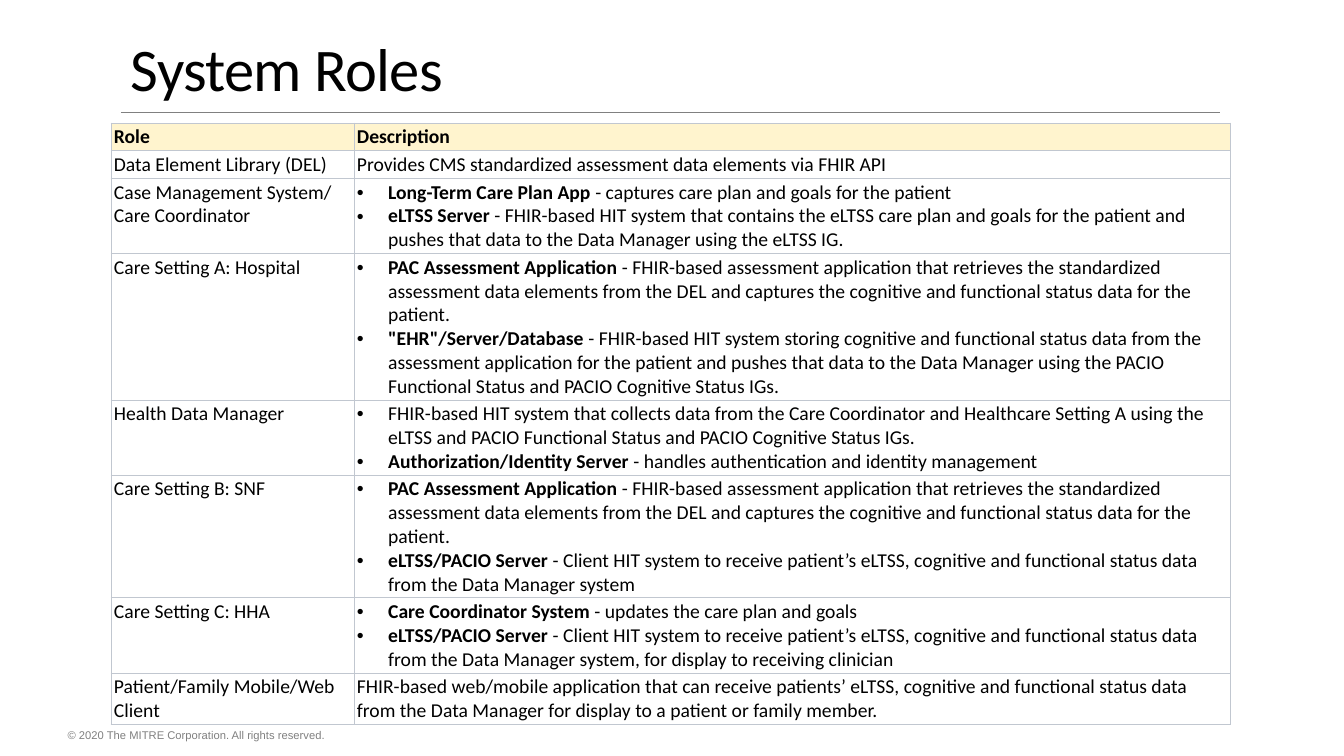
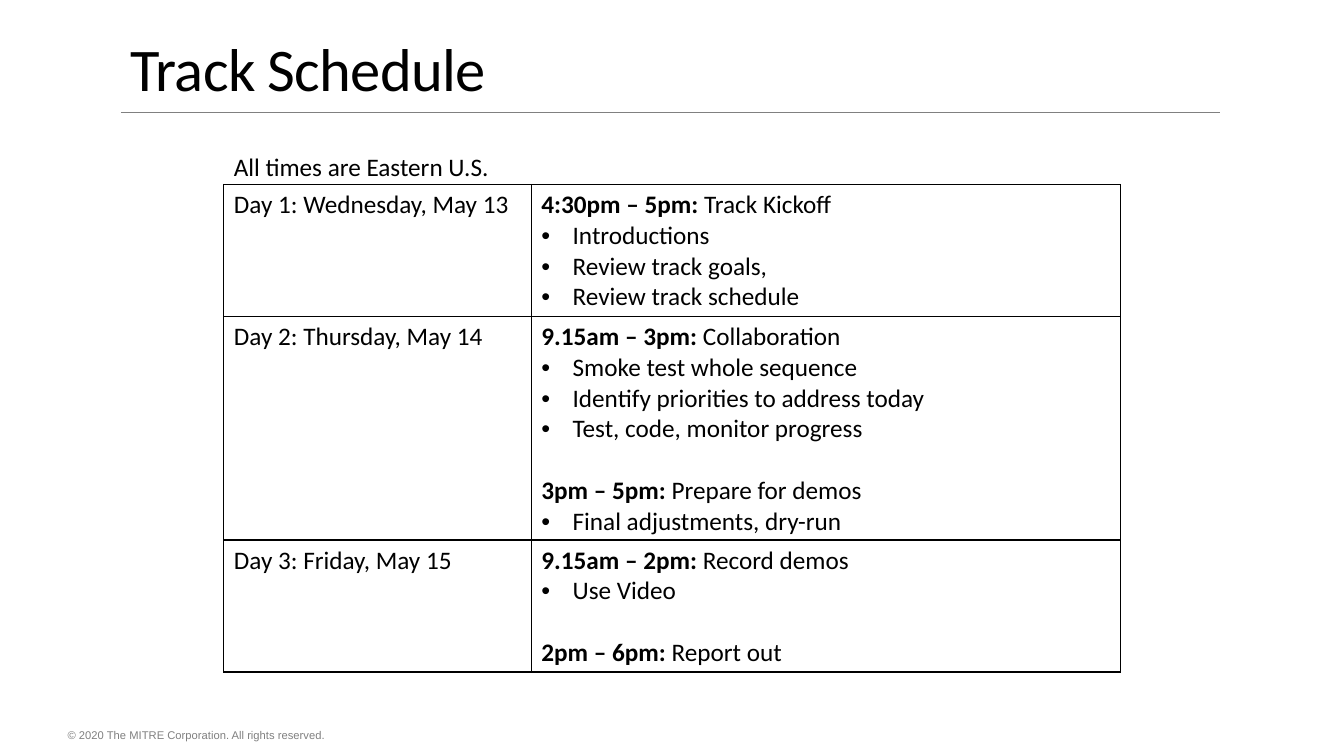
from dataclasses import dataclass

from lxml import etree
from pptx import Presentation
from pptx.dml.color import RGBColor
from pptx.enum.shapes import MSO_CONNECTOR
from pptx.enum.text import MSO_ANCHOR
from pptx.oxml.ns import qn
from pptx.util import Inches, Pt

STRAIGHT = MSO_CONNECTOR.STRAIGHT
MIDDLE, BOTTOM = MSO_ANCHOR.MIDDLE, MSO_ANCHOR.BOTTOM

BLACK = RGBColor(0x00, 0x00, 0x00)
WHITE = RGBColor(0xFF, 0xFF, 0xFF)
GRAY = RGBColor(0x80, 0x80, 0x80)
PALE_BLUE = RGBColor(0xC1, 0xC7, 0xD0)
CREAM = RGBColor(0xFF, 0xF4, 0xCE)

BODY_FONT, FOOTER_FONT = "Calibri", "Arial"
SLIDE_WIDTH, SLIDE_HEIGHT = 13.33, 7.5
BULLET_INDENT = 0.31
LINE_FACTOR = 1.21  # line height as a multiple of the text size
FOOTER = "© 2020 The MITRE Corporation. All rights reserved."


@dataclass
class Line:
    """One paragraph: a bold lead, then regular text."""
    lead: str = ""
    text: str = ""
    bullet: bool = False
    gap: bool = False  # one empty line's worth of space before


@dataclass
class TableStyle:
    size: int
    border: RGBColor
    border_width: float
    inset_x: float
    inset_y: float


ROLE_STYLE = TableStyle(14, PALE_BLUE, 0.5, 0.03, 0.02)
SCHEDULE_STYLE = TableStyle(18, BLACK, 1, 0.1, 0.05)


def item(lead="", text=""):
    return Line(lead, text, bullet=True)


ASSESSMENT_APP = item(
    "PAC Assessment Application ",
    "- FHIR-based assessment application that retrieves the standardized assessment data "
    "elements from the DEL and captures the cognitive and functional status data for the patient.")
CLIENT_SERVER = "eLTSS/PACIO Server "
CLIENT_TEXT = ("- Client HIT system to receive patient’s eLTSS, cognitive and functional "
               "status data from the Data Manager system")

# Each row: left cell, right cell, number of text lines
ROLES = [
    ([Line("Role")], [Line("Description")], 1),
    ([Line(text="Data Element Library (DEL)")],
     [Line(text="Provides CMS standardized assessment data elements via FHIR API")], 1),
    ([Line(text="Case Management System/ Care Coordinator")],
     [item("Long-Term Care Plan App ", "- captures care plan and goals for the patient"),
      item("eLTSS Server ",
           "- FHIR-based HIT system that contains the eLTSS care plan and goals for the "
           "patient and pushes that data to the Data Manager using the eLTSS IG.")], 3),
    ([Line(text="Care Setting A: Hospital")],
     [ASSESSMENT_APP,
      item('"EHR"/Server/Database ',
           "- FHIR-based HIT system storing cognitive and functional status data from the "
           "assessment application for the patient and pushes that data to the Data Manager "
           "using the PACIO Functional Status and PACIO Cognitive Status IGs.")], 6),
    ([Line(text="Health Data Manager")],
     [item(text="FHIR-based HIT system that collects data from the Care Coordinator and "
                "Healthcare Setting A using the eLTSS and PACIO Functional Status and "
                "PACIO Cognitive Status IGs."),
      item("Authorization/Identity Server ",
           "- handles authentication and identity management")], 3),
    ([Line(text="Care Setting B: SNF")],
     [ASSESSMENT_APP, item(CLIENT_SERVER, CLIENT_TEXT)], 5),
    ([Line(text="Care Setting C: HHA")],
     [item("Care Coordinator System ", "- updates the care plan and goals"),
      item(CLIENT_SERVER, CLIENT_TEXT + ", for display to receiving clinician")], 3),
    ([Line(text="Patient/Family Mobile/Web Client")],
     [Line(text="FHIR-based web/mobile application that can receive patients’ eLTSS, "
                "cognitive and functional status data from the Data Manager for display "
                "to a patient or family member.")], 2),
]

SCHEDULE = [
    ([Line(text="Day 1: Wednesday, May 13")],
     [Line("4:30pm – 5pm: ", "Track Kickoff"),
      item(text="Introductions"),
      item(text="Review track goals,"),
      item(text="Review track schedule")], 4),
    ([Line(text="Day 2: Thursday, May 14")],
     [Line("9.15am – 3pm: ", "Collaboration"),
      item(text="Smoke test whole sequence"),
      item(text="Identify priorities to address today"),
      item(text="Test, code, monitor progress"),
      Line("3pm – 5pm: ", "Prepare for demos", gap=True),
      item(text="Final adjustments, dry-run")], 7),
    ([Line(text="Day 3: Friday, May 15")],
     [Line("9.15am – 2pm: ", "Record demos"),
      item(text="Use Video"),
      Line("2pm – 6pm: ", "Report out", gap=True)], 4),
]


def style_font(font, size, color=BLACK, name=BODY_FONT, bold=False):
    font.size, font.name, font.bold = Pt(size), name, bold
    font.color.rgb = color


def add_text(slide, box, text, size, color=BLACK, name=BODY_FONT):
    shape = slide.shapes.add_textbox(*map(Inches, box))
    frame = shape.text_frame
    frame.word_wrap = True
    frame.text = text
    style_font(frame.paragraphs[0].runs[0].font, size, color, name)
    return frame


def add_bullet(paragraph):
    properties = paragraph._p.get_or_add_pPr()
    properties.set("marL", str(Inches(BULLET_INDENT)))
    properties.set("indent", str(-Inches(BULLET_INDENT)))
    etree.SubElement(properties, qn("a:buFont")).set("typeface", "Arial")
    etree.SubElement(properties, qn("a:buChar")).set("char", "•")


def set_borders(cell, color, width):
    properties = cell._tc.get_or_add_tcPr()
    for side in ("lnL", "lnR", "lnT", "lnB"):
        border = etree.SubElement(properties, qn(f"a:{side}"), w=str(Pt(width)))
        fill = etree.SubElement(border, qn("a:solidFill"))
        etree.SubElement(fill, qn("a:srgbClr"), val=str(color))


def fill_cell(cell, lines, style, fill):
    cell.margin_left = cell.margin_right = Inches(style.inset_x)
    cell.margin_top = cell.margin_bottom = Inches(style.inset_y)
    set_borders(cell, style.border, style.border_width)
    cell.fill.solid()
    cell.fill.fore_color.rgb = fill
    frame = cell.text_frame
    for index, line in enumerate(lines):
        paragraph = frame.add_paragraph() if index else frame.paragraphs[0]
        if line.bullet:
            add_bullet(paragraph)
        if line.gap:
            paragraph.space_before = Pt(style.size * 1.22)
        for text, bold in ((line.lead, True), (line.text, False)):
            if text:
                run = paragraph.add_run()
                run.text = text
                style_font(run.font, style.size, bold=bold)


def add_grid(slide, left, top, widths, rows, style, header_fill=WHITE):
    """Table whose row heights follow from the number of text lines."""
    heights = [count * style.size * LINE_FACTOR / 72 + 2 * style.inset_y
               for _, _, count in rows]
    box = (left, top, sum(widths), sum(heights))
    table = slide.shapes.add_table(len(rows), len(widths), *map(Inches, box)).table
    table.first_row = table.horz_banding = False
    for column, width in zip(table.columns, widths):
        column.width = Inches(width)
    for index, (*cells, _) in enumerate(rows):
        table.rows[index].height = Inches(heights[index])
        for cell, lines in zip(table.rows[index].cells, cells):
            fill_cell(cell, lines, style, WHITE if index else header_fill)


def add_titled_slide(presentation, title):
    """Blank slide with the shared rule, footer and title."""
    slide = presentation.slides.add_slide(presentation.slide_layouts[6])
    # Rule below the title
    rule = slide.shapes.add_connector(
        STRAIGHT, *map(Inches, (1.2, 1.11, 12.1, 1.11)))
    rule.line.color.rgb = GRAY
    rule.line.width = Pt(0.5)
    etree.SubElement(rule._element.spPr, qn("a:effectLst"))
    # Footer
    footer = add_text(slide, (0.67, 7.18, 8.24, 0.22), FOOTER, 8, GRAY, FOOTER_FONT)
    footer.margin_left = footer.margin_right = 0
    footer.margin_top = footer.margin_bottom = 0
    footer.vertical_anchor = MIDDLE
    # Title
    heading = add_text(slide, (1.2, 0.31, 11, 0.77), title, 43.2)
    heading.vertical_anchor = BOTTOM
    paragraph = heading.paragraphs[0]
    paragraph.line_spacing = 0.85
    paragraph.runs[0].font._element.set("spc", "-50")
    return slide


def build_roles(presentation):
    slide = add_titled_slide(presentation, "System Roles")
    add_grid(slide, 1.1, 1.22, (2.41, 8.69), ROLES, ROLE_STYLE, CREAM)


def build_schedule(presentation):
    slide = add_titled_slide(presentation, "Track Schedule")
    left, top = 2.22, 1.83
    add_grid(slide, left, top, (3.05, 5.84), SCHEDULE, SCHEDULE_STYLE)
    # Time zone note above the table
    add_text(slide, (left, top - 0.38, 5.59, 0.4), "All times are Eastern U.S.", 18)


def main():
    presentation = Presentation()
    presentation.slide_width = Inches(SLIDE_WIDTH)
    presentation.slide_height = Inches(SLIDE_HEIGHT)
    build_roles(presentation)
    build_schedule(presentation)
    presentation.save("out.pptx")


if __name__ == "__main__":
    main()
